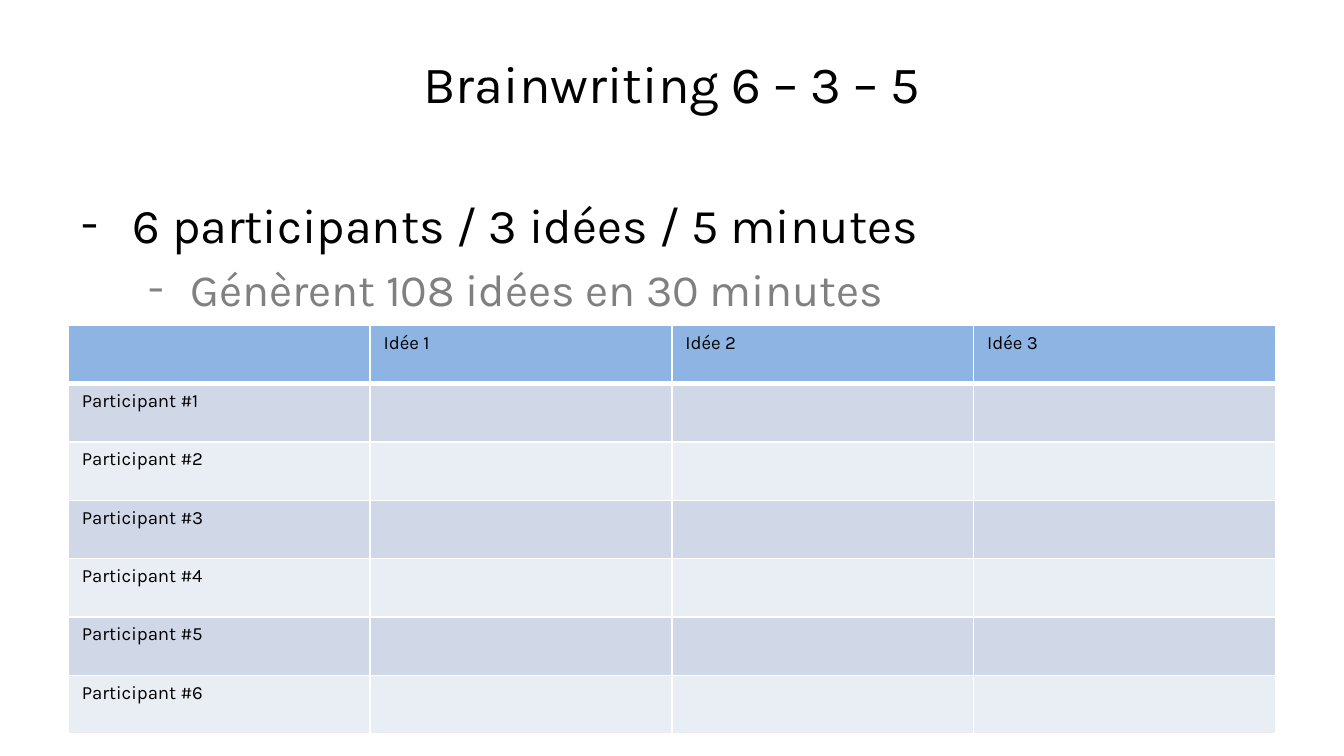
from lxml.etree import SubElement
from pptx import Presentation
from pptx.dml.color import RGBColor
from pptx.enum.text import PP_ALIGN
from pptx.oxml.ns import qn
from pptx.util import Inches, Pt

BLACK = RGBColor(0x00, 0x00, 0x00)
GRAY = RGBColor(0x80, 0x80, 0x80)
WHITE = RGBColor(0xFF, 0xFF, 0xFF)
HEADER_BLUE = RGBColor(0x8E, 0xB4, 0xE3)
BANDS = [RGBColor(0xE9, 0xED, 0xF4), RGBColor(0xD0, 0xD8, 0xE8)]
FONT = "Karla"
MARGIN = Inches(0.51)

presentation = Presentation()
presentation.slide_width = Inches(10)
presentation.slide_height = presentation.slide_width * 9 // 16
slide = presentation.slides.add_slide(presentation.slide_layouts[6])
content_width = presentation.slide_width - 2 * MARGIN


def format_text(paragraph, size, color):
    for run in paragraph.runs:
        run.font.name = FONT
        run.font.size = Pt(size)
        run.font.color.rgb = color


def set_border(cell, side, width):
    line = SubElement(cell._tc.get_or_add_tcPr(), qn(f"a:ln{side}"), w=str(Pt(width)))
    fill = SubElement(line, qn("a:solidFill"))
    SubElement(fill, qn("a:srgbClr"), val=str(WHITE))


# Title
title = slide.shapes.add_textbox(0, Inches(0.33), presentation.slide_width, Inches(0.38))
title.text_frame.word_wrap = True
title.text_frame.text = "Brainwriting 6 – 3 – 5"
title_paragraph = title.text_frame.paragraphs[0]
title_paragraph.alignment = PP_ALIGN.CENTER
format_text(title_paragraph, 28, BLACK)

# Bullets: text, level, left indent, hanging indent, size, colour
bullets = [
    ("6 participants / 3 idées / 5 minutes", 0, 0.38, 0.38, 26, BLACK),
    ("Génèrent 108 idées en 30 minutes", 1, 0.81, 0.31, 24, GRAY),
]
body = slide.shapes.add_textbox(MARGIN, Inches(1.4), content_width, Inches(3.7))
body.text_frame.word_wrap = True
body.text_frame.text = "\n".join(bullet[0] for bullet in bullets)
for paragraph, (_, level, indent, hanging, size, color) in zip(body.text_frame.paragraphs, bullets):
    paragraph.level = level
    if level:
        paragraph.space_before = Pt(0.2 * size)
    properties = paragraph._p.get_or_add_pPr()
    properties.set("marL", str(Inches(indent)))
    properties.set("indent", str(-Inches(hanging)))
    SubElement(properties, qn("a:buFont"), typeface=FONT)
    SubElement(properties, qn("a:buChar"), char="-")
    format_text(paragraph, size, color)

# Idea table
rows = [["", "Idée 1", "Idée 2", "Idée 3"]]
rows += [[f"Participant #{number}", "", "", ""] for number in range(1, 7)]
table = slide.shapes.add_table(
    len(rows), len(rows[0]), MARGIN, Inches(2.42), content_width, Inches(3.04)
).table
for row_index, row in enumerate(rows):
    for column_index, text in enumerate(row):
        cell = table.cell(row_index, column_index)
        cell.text = text
        format_text(cell.text_frame.paragraphs[0], 10, BLACK)
        set_border(cell, "L", 1)
        set_border(cell, "R", 1)
        set_border(cell, "T", 3 if row_index == 1 else 1)
        set_border(cell, "B", 3 if row_index == 0 else 1)
        cell.fill.solid()
        cell.fill.fore_color.rgb = BANDS[row_index % 2] if row_index else HEADER_BLUE

presentation.save("out.pptx")
